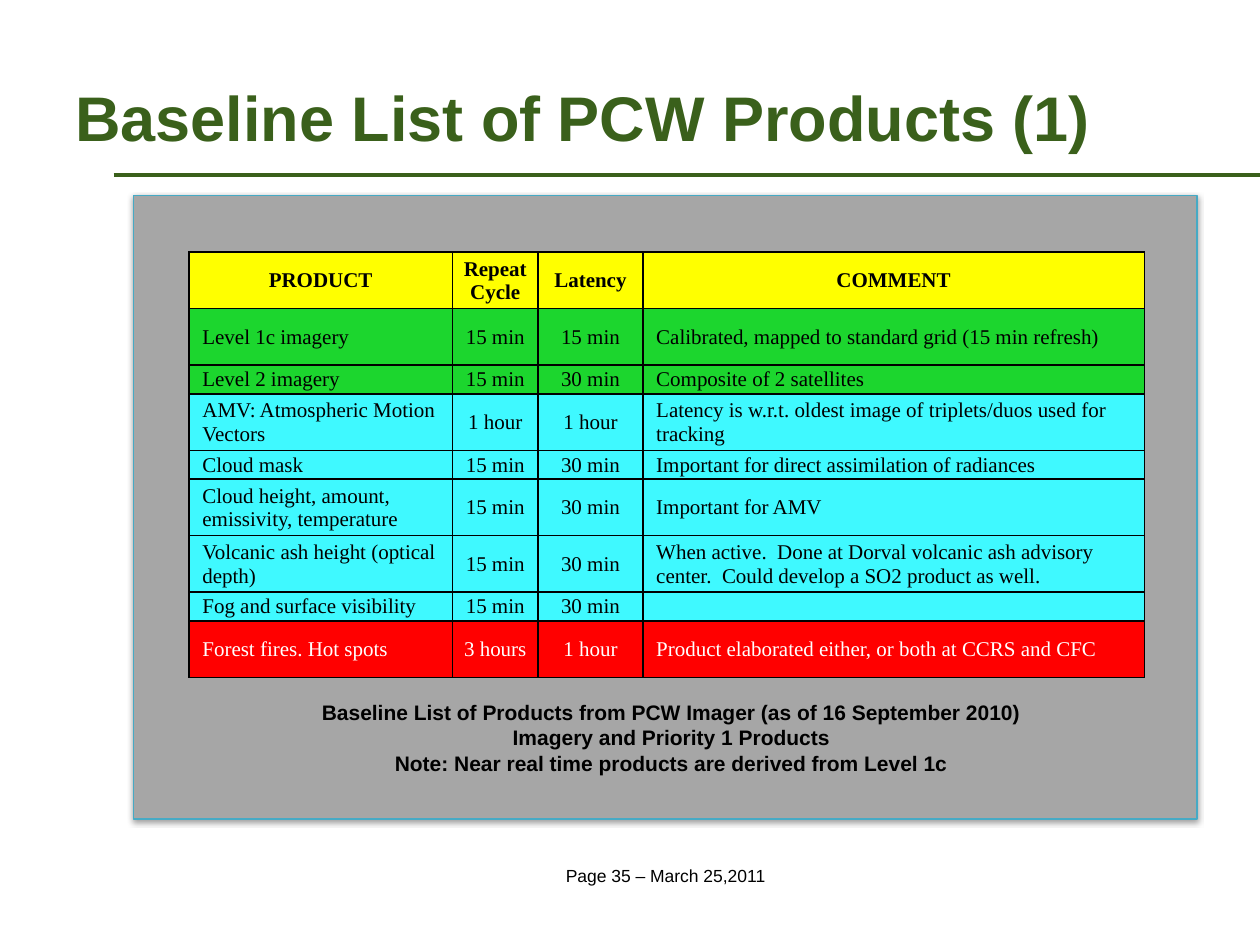
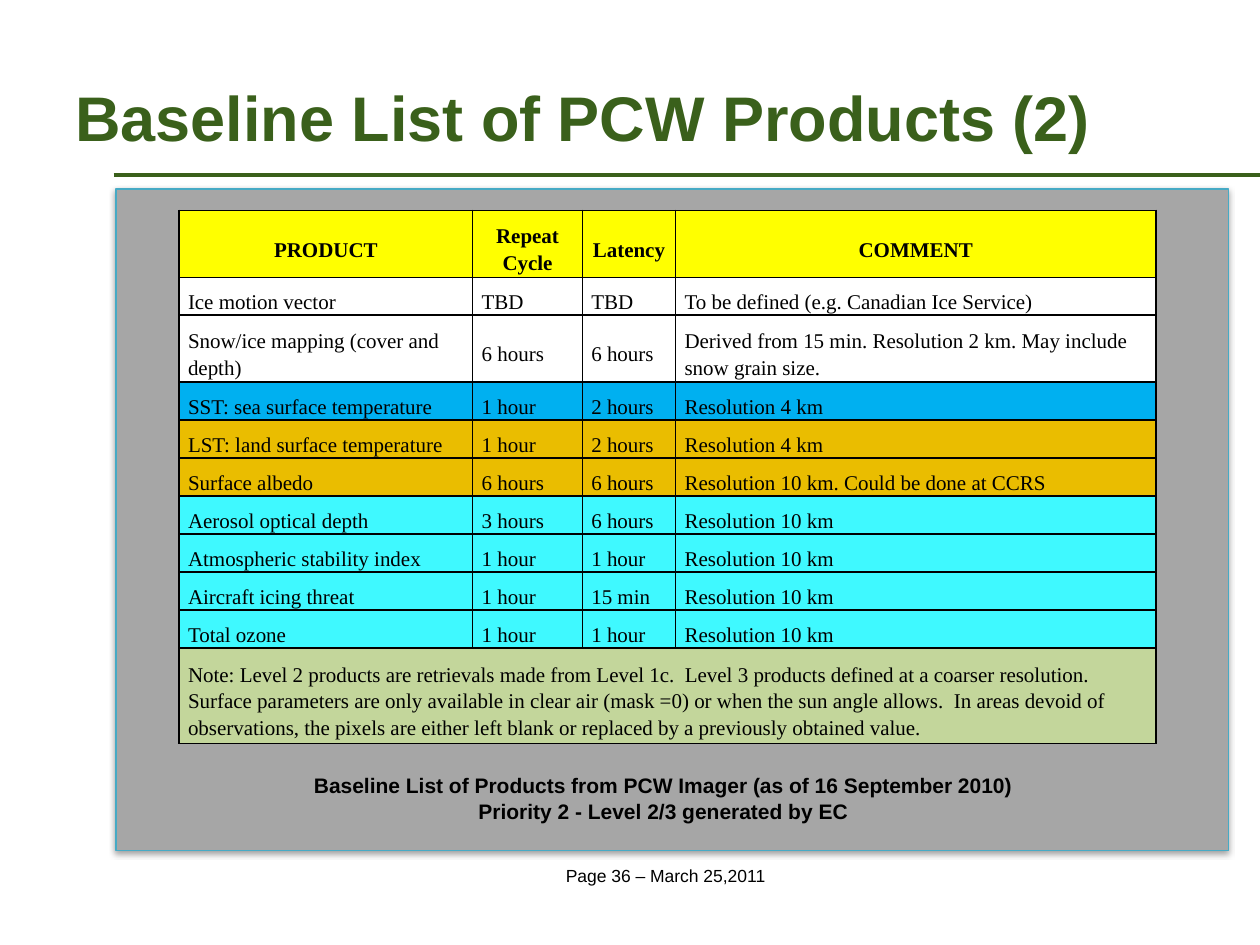
from lxml.etree import SubElement
from pptx import Presentation
from pptx.dml.color import RGBColor
from pptx.enum.shapes import MSO_CONNECTOR, MSO_SHAPE
from pptx.enum.text import MSO_ANCHOR, PP_ALIGN
from pptx.oxml import parse_xml
from pptx.oxml.ns import nsdecls, qn
from pptx.util import Cm, Pt

HUE = {
    "black": "000000", "white": "FFFFFF", "pine": "3A601B", "gray": "A6A6A6",
    "teal": "46AAC5", "yellow": "FFFF00", "green": "1CD62E", "cyan": "3FF9FF",
    "red": "FF0000", "blue": "00B0F0", "gold": "EABD00", "sage": "C3D69B",
}
HEAD = ("yellow", 2, ["PRODUCT", "Repeat Cycle", "Latency", "COMMENT"])
LEAD = "Baseline List of Products from PCW Imager (as of 16 September 2010)"
MID, LEFT = PP_ALIGN.CENTER, PP_ALIGN.LEFT

# Each row: fill, height in lines, cell texts
ROWS1 = [
    HEAD,
    ("green", 2, ["Level 1c imagery", "15 min", "15 min",
                  "Calibrated, mapped to standard grid (15 min refresh)"]),
    ("green", 1, ["Level 2 imagery", "15 min", "30 min", "Composite of 2 satellites"]),
    ("cyan", 2, ["AMV: Atmospheric Motion Vectors", "1 hour", "1 hour",
                 "Latency is w.r.t. oldest image of triplets/duos used for tracking"]),
    ("cyan", 1, ["Cloud mask", "15 min", "30 min",
                 "Important for direct assimilation of radiances"]),
    ("cyan", 2, ["Cloud height, amount, emissivity, temperature", "15 min", "30 min",
                 "Important for AMV"]),
    ("cyan", 2, ["Volcanic ash height (optical depth)", "15 min", "30 min",
                 "When active.  Done at Dorval volcanic ash advisory center.  "
                 "Could develop a SO2 product as well."]),
    ("cyan", 1, ["Fog and surface visibility", "15 min", "30 min", ""]),
    ("red", 2, ["Forest fires. Hot spots", "3 hours", "1 hour",
                "Product elaborated either, or both at CCRS and CFC"]),
]
ROWS2 = [
    HEAD,
    ("white", 1, ["Ice motion vector", "TBD", "TBD",
                  "To be defined (e.g. Canadian Ice Service)"]),
    ("white", 2, ["Snow/ice mapping (cover and depth)", "6 hours", "6 hours",
                  "Derived from 15 min. Resolution 2 km. May include snow grain size."]),
    ("blue", 1, ["SST: sea surface temperature", "1 hour", "2 hours", "Resolution 4 km"]),
    ("gold", 1, ["LST: land surface temperature", "1 hour", "2 hours", "Resolution 4 km"]),
    ("gold", 1, ["Surface albedo", "6 hours", "6 hours",
                 "Resolution 10 km. Could be done at CCRS"]),
    ("cyan", 1, ["Aerosol optical depth", "3 hours", "6 hours", "Resolution 10 km"]),
    ("cyan", 1, ["Atmospheric stability index", "1 hour", "1 hour", "Resolution 10 km"]),
    ("cyan", 1, ["Aircraft icing threat", "1 hour", "15 min", "Resolution 10 km"]),
    ("cyan", 1, ["Total ozone", "1 hour", "1 hour", "Resolution 10 km"]),
    ("sage", 3, ["Note: Level 2 products are retrievals made from Level 1c.  Level 3 products "
                 "defined at a coarser resolution. Surface parameters are only available in "
                 "clear air (mask =0) or when the sun angle allows.  In areas devoid of "
                 "observations, the pixels are either left blank or replaced by a previously "
                 "obtained value."]),
]

# What differs between the slides, lengths in cm
PAGES = [
    {"num": 1, "page": 35, "panel": (2.69, 3.94, 21.44, 12.57), "grid": (3.81, 5.08),
     "cols": (5.31, 1.73, 2.11, 10.11), "tall": {1: 0.58, 2: 1.14}, "rows": ROWS1,
     "pad": 0.02, "dent": 0.25, "mids": (1, 2), "space": None,
     "note": (4.01, 13.97, 19.05, 1.8),
     "lines": [LEAD, "Imagery and Priority 1 Products",
               "Note: Near real time products are derived from Level 1c"]},
    {"num": 2, "page": 36, "panel": (2.34, 3.81, 22.43, 13.34), "grid": (3.61, 4.24),
     "cols": (5.92, 2.21, 1.88, 9.68), "tall": {1: 0.73, 2: 1.27, 3: 1.81}, "rows": ROWS2,
     "pad": 0.18, "dent": 0, "mids": (), "space": 1.15,
     "note": (4.88, 15.44, 16.99, 1.3),
     "lines": [LEAD, "Priority 2 - Level 2/3 generated by EC"]},
]


def write(para, text, size, face="Arial", hue="black", bold=False, align=MID):
    para.alignment = align
    run = para.add_run()
    run.text = text
    font = run.font
    font.size, font.name, font.bold = Pt(size), face, bold
    font.color.rgb = RGBColor.from_string(HUE[hue])


def label(slide, spot, lines, size, anchor=MSO_ANCHOR.TOP, **look):
    frame = slide.shapes.add_textbox(*map(Cm, spot)).text_frame
    frame.word_wrap = True
    frame.vertical_anchor = anchor
    for i, text in enumerate(lines):
        para = frame.add_paragraph() if i else frame.paragraphs[0]
        write(para, text, size, **look)


deck = Presentation()
deck.slide_width, deck.slide_height = Cm(25.4), Cm(19.05)

for page in PAGES:
    slide = deck.slides.add_slide(deck.slide_layouts[6])

    # Footer and rule
    label(slide, (2.11, 17.32, 22.61, 0.69), [f"Page {page['page']} – March 25,2011"], 10)
    rule = slide.shapes.add_connector(MSO_CONNECTOR.STRAIGHT,
                                      Cm(2.29), Cm(3.53), Cm(25.4), Cm(3.53))
    rule.line.color.rgb = RGBColor.from_string(HUE["pine"])
    rule.line.width = Pt(2.25)
    SubElement(rule._element.spPr, qn("a:effectLst"))

    # Gray panel with soft shadow
    panel = slide.shapes.add_shape(MSO_SHAPE.RECTANGLE, *map(Cm, page["panel"]))
    panel.fill.solid()
    panel.fill.fore_color.rgb = RGBColor.from_string(HUE["gray"])
    panel.line.color.rgb = RGBColor.from_string(HUE["teal"])
    panel.line.width = Pt(0.75)
    panel._element.spPr.append(parse_xml(
        f'<a:effectLst {nsdecls("a")}><a:outerShdw blurRad="40000" dist="20000" '
        f'dir="5400000" rotWithShape="0"><a:srgbClr val="{HUE["black"]}">'
        '<a:alpha val="38000"/></a:srgbClr></a:outerShdw></a:effectLst>'))

    # Title
    label(slide, (1.27, 0.76, 22.86, 3.18), [f"Baseline List of PCW Products ({page['num']})"],
          36, MSO_ANCHOR.MIDDLE, hue="pine", bold=True, align=LEFT)

    # Product table
    rows, cols = page["rows"], page["cols"]
    high = sum(page["tall"][row[1]] for row in rows)
    grid = slide.shapes.add_table(len(rows), len(cols), *map(Cm, page["grid"]),
                                  Cm(sum(cols)), Cm(high)).table
    grid.first_row = grid.horz_banding = False
    for i, wide in enumerate(cols):
        grid.columns[i].width = Cm(wide)
    for r, (fill, count, texts) in enumerate(rows):
        grid.rows[r].height = Cm(page["tall"][count])
        if len(texts) == 1:
            grid.cell(r, 0).merge(grid.cell(r, len(cols) - 1))
        for c in range(len(cols)):
            cell = grid.cell(r, c)
            cell.margin_left = cell.margin_right = cell.margin_top = Cm(page["pad"])
            cell.margin_bottom = 0
            cell.vertical_anchor = MSO_ANCHOR.MIDDLE
            for side in ("lnL", "lnR", "lnT", "lnB"):
                edge = SubElement(cell._tc.get_or_add_tcPr(), qn(f"a:{side}"), w="12700")
                paint = SubElement(edge, qn("a:solidFill"))
                SubElement(paint, qn("a:srgbClr"), val=HUE["black"])
            cell.fill.solid()
            cell.fill.fore_color.rgb = RGBColor.from_string(HUE[fill])

            para = cell.text_frame.paragraphs[0]
            text = texts[c] if c < len(texts) else ""
            if not text:
                SubElement(para._p, qn("a:endParaRPr"), sz="1200")
                continue
            if page["space"]:
                para.line_spacing = page["space"]
                para.space_after = Pt(10)
            mid = r == 0 or c in page["mids"]
            if page["dent"] and not mid:
                para._p.get_or_add_pPr().set("marL", str(Cm(page["dent"])))
            write(para, text, 12, "Times New Roman", "white" if fill == "red" else "black",
                  r == 0, MID if mid else LEFT)

    # Caption
    label(slide, page["note"], page["lines"], 12, MSO_ANCHOR.MIDDLE, bold=True)

deck.save("out.pptx")
